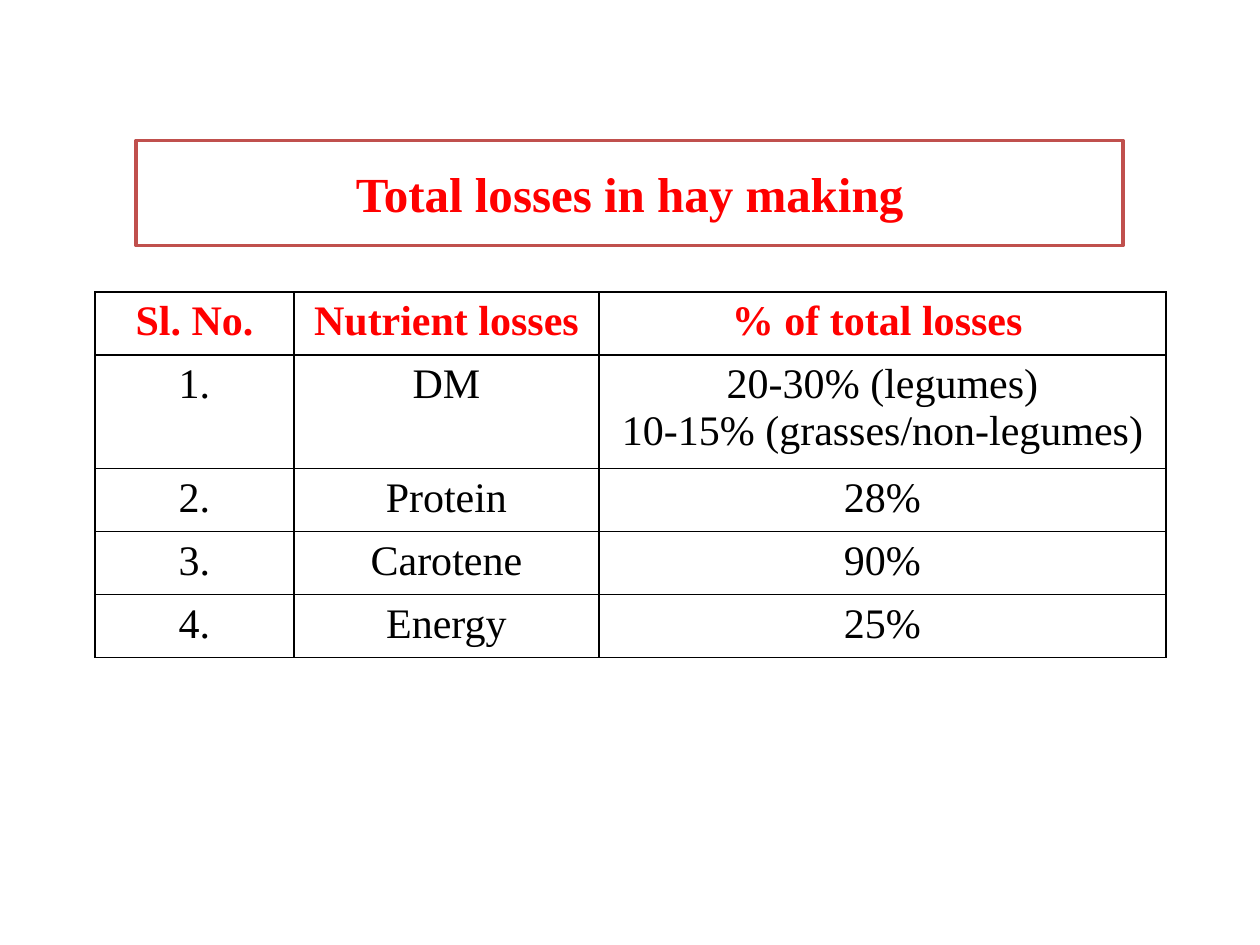
from dataclasses import dataclass

from lxml import etree
from pptx import Presentation
from pptx import util as u
from pptx.dml.color import RGBColor
from pptx.enum import text
from pptx.oxml.ns import qn

PX = u.Inches(1) / 126  # one px in EMU


@dataclass(frozen=True)
class Theme:
    font: str = "Times New Roman"
    red: str = "FF0000"
    black: str = "000000"
    white: str = "FFFFFF"
    frame: str = "C0504D"
    title_size: int = 28
    table_size: int = 24


theme = Theme()


def px(length):
    return u.Emu(round(length * PX))


def style(para, size, color, bold):
    para.alignment = text.PP_ALIGN.CENTER
    para.font.name = theme.font
    para.font.size = u.Pt(size)
    para.font.bold = bold
    para.font.color.rgb = RGBColor.from_string(color)


deck = Presentation()
deck.slide_width, deck.slide_height = px(1260), px(945)
page = deck.slides.add_slide(deck.slide_layouts[5])

# Framed title
title = page.shapes.title
title.left, title.top, title.width, title.height = px(136), px(157), px(987), px(72)
title.fill.solid()
title.fill.fore_color.rgb = RGBColor.from_string(theme.white)
title.line.color.rgb = RGBColor.from_string(theme.frame)
title.line.width = u.Pt(2)
frame = title.text_frame
frame.text = "Total losses in hay making"
frame.word_wrap = True
frame.auto_size = text.MSO_AUTO_SIZE.SHAPE_TO_FIT_TEXT
frame.vertical_anchor = text.MSO_ANCHOR.MIDDLE
style(frame.paragraphs[0], theme.title_size, theme.red, True)

# Table of losses
losses = [
    ("Sl. No.", "Nutrient losses", "% of total losses "),
    ("1.", "DM", "20-30% (legumes)\n10-15% (grasses/non-legumes)"),
    ("2.", "Protein", "28%"),
    ("3.", "Carotene", "90%"),
    ("4.", "Energy", "25%"),
]
column_widths = [199, 305, 567]
row_heights = [63, 113, 63, 63, 63]
table = page.shapes.add_table(
    len(losses), len(column_widths), px(95), px(292),
    px(sum(column_widths)), px(sum(row_heights)),
).table
table.first_row = table.horz_banding = False
for column, width in zip(table.columns, column_widths):
    column.width = px(width)

for row_index, (row, height, words) in enumerate(zip(table.rows, row_heights, losses)):
    row.height = px(height)
    header = row_index == 0
    for cell, wording in zip(row.cells, words):
        cell.text = wording
        for para in cell.text_frame.paragraphs:
            style(para, theme.table_size, theme.red if header else theme.black, header)
        # Cell borders come before the fill in the XML
        properties = cell._tc.get_or_add_tcPr()
        for side in ("a:lnL", "a:lnR", "a:lnT", "a:lnB"):
            border = etree.SubElement(properties, qn(side), w=str(u.Pt(1)))
            fill = etree.SubElement(border, qn("a:solidFill"))
            etree.SubElement(fill, qn("a:srgbClr"), val=theme.black)
        cell.fill.background()

deck.save("out.pptx")
